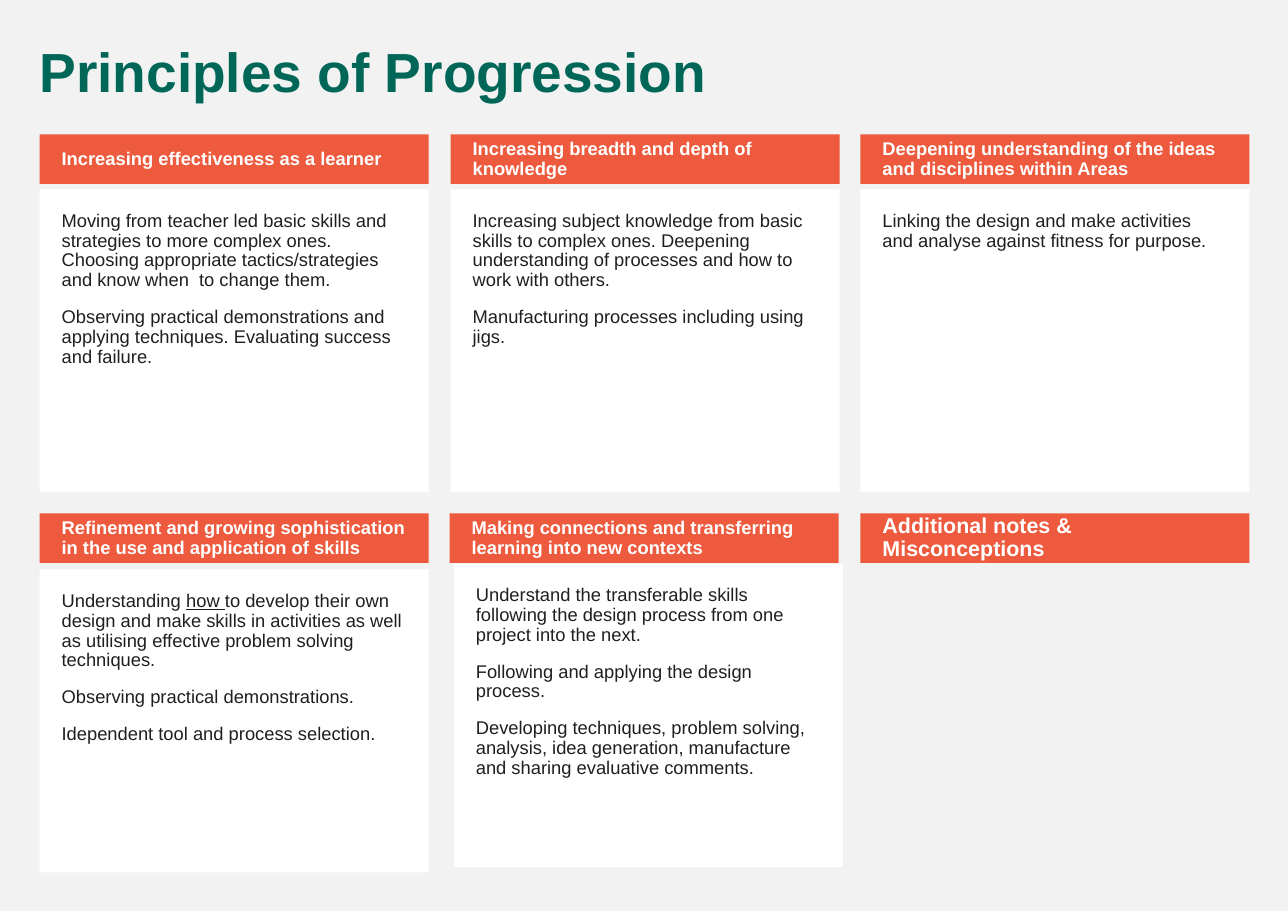
"""Build the Principles of Progression slide: a title and six headed cards."""
from pptx import Presentation
from pptx.dml.color import RGBColor
from pptx.enum.shapes import MSO_SHAPE
from pptx.enum.text import MSO_ANCHOR, PP_ALIGN
from pptx.util import Pt


def rgb(code):
    return RGBColor.from_string(code)


def add_text_block(x, y, w, h, paragraphs, size, color, bold=False, fill=None,
                   anchor=MSO_ANCHOR.TOP, insets=(7.2, 3.6, 7.2, 3.6)):
    """Add a box of text; words between underscores are underlined."""
    if fill:
        sp = s.shapes.add_shape(MSO_SHAPE.RECTANGLE, Pt(x), Pt(y), Pt(w), Pt(h))
        sp.shadow.inherit = False
        sp.fill.solid()
        sp.fill.fore_color.rgb = rgb(fill)
        sp.line.fill.background()
    else:
        sp = s.shapes.add_textbox(Pt(x), Pt(y), Pt(w), Pt(h))
    tf = sp.text_frame
    tf.word_wrap = True
    tf.vertical_anchor = anchor
    tf.margin_left, tf.margin_top, tf.margin_right, tf.margin_bottom = map(Pt, insets)
    for i, text in enumerate(paragraphs):
        p = tf.add_paragraph() if i else tf.paragraphs[0]
        p.alignment = PP_ALIGN.LEFT
        p.line_spacing = 0.9
        p.space_before = Pt(11)
        for j, part in enumerate(text.split("_")):
            r = p.add_run()
            r.text = part
            r.font.name = "Arial"
            r.font.size = Pt(size)
            r.font.bold = bold
            r.font.underline = j % 2 == 1
            r.font.color.rgb = rgb(color)


prs = Presentation()
prs.slide_width, prs.slide_height = Pt(841.7), Pt(595.4)
s = prs.slides.add_slide(prs.slide_layouts[6])
s.background.fill.solid()
s.background.fill.fore_color.rgb = rgb("F2F2F2")

add_text_block(18.7, 25.9, 797.8, 46.8, ["Principles of Progression"], 36, "006758", bold=True)

CARD_W, HEAD_H, BODY_H = 254.2, 32.4, 198
TOP, BOTTOM = 87.8, 335.5
LEFT, MIDDLE, RIGHT = 25.9, 294.5, 562.3

cards = [
    (LEFT, TOP, "Increasing effectiveness as a learner", 12, (LEFT, 123.8), [
        "Moving from teacher led basic skills and strategies to more complex ones.  "
        "Choosing appropriate tactics/strategies and know when  to change them.",
        "Observing practical demonstrations and applying techniques. "
        "Evaluating success and failure."]),
    (MIDDLE, TOP, "Increasing breadth and depth of knowledge", 12, (MIDDLE, 123.8), [
        "Increasing subject knowledge from basic skills to complex ones. "
        "Deepening understanding of processes and how to work with others.",
        "Manufacturing processes including using jigs."]),
    (RIGHT, TOP, "Deepening understanding of the ideas and disciplines within Areas", 12,
     (RIGHT, 123.8), [
        "Linking the design and make activities and analyse against fitness for purpose."]),
    (LEFT, BOTTOM, "Refinement and growing sophistication in the use and application of skills", 12,
     (LEFT, 372.2), [
        "Understanding _how _to develop their own design and make skills in activities "
        "as well as utilising effective problem solving techniques.",
        "Observing practical demonstrations.",
        "Idependent tool and process selection."]),
    (293.8, BOTTOM, "Making connections and transferring learning into new contexts", 12,
     (296.6, 368.6), [
        "Understand the transferable skills following the design process from "
        "one project into the next.",
        "Following and applying the design process.",
        "Developing techniques, problem solving, analysis, idea generation, "
        "manufacture and sharing evaluative comments."]),
    (RIGHT, BOTTOM, "Additional notes & Misconceptions", 14, None, []),
]

for x, y, heading, size, body_at, paragraphs in cards:
    if body_at:
        add_text_block(*body_at, CARD_W, BODY_H, paragraphs, 12, "1F1F1F",
                       fill="FFFFFF", insets=(14.4, 14.4, 14.4, 14.4))
    add_text_block(x, y, CARD_W, HEAD_H, [heading], size, "FFFFFF", bold=True,
                   fill="ED5A3E", anchor=MSO_ANCHOR.MIDDLE, insets=(14.4, 3.6, 7.2, 3.6))

prs.save("out.pptx")
